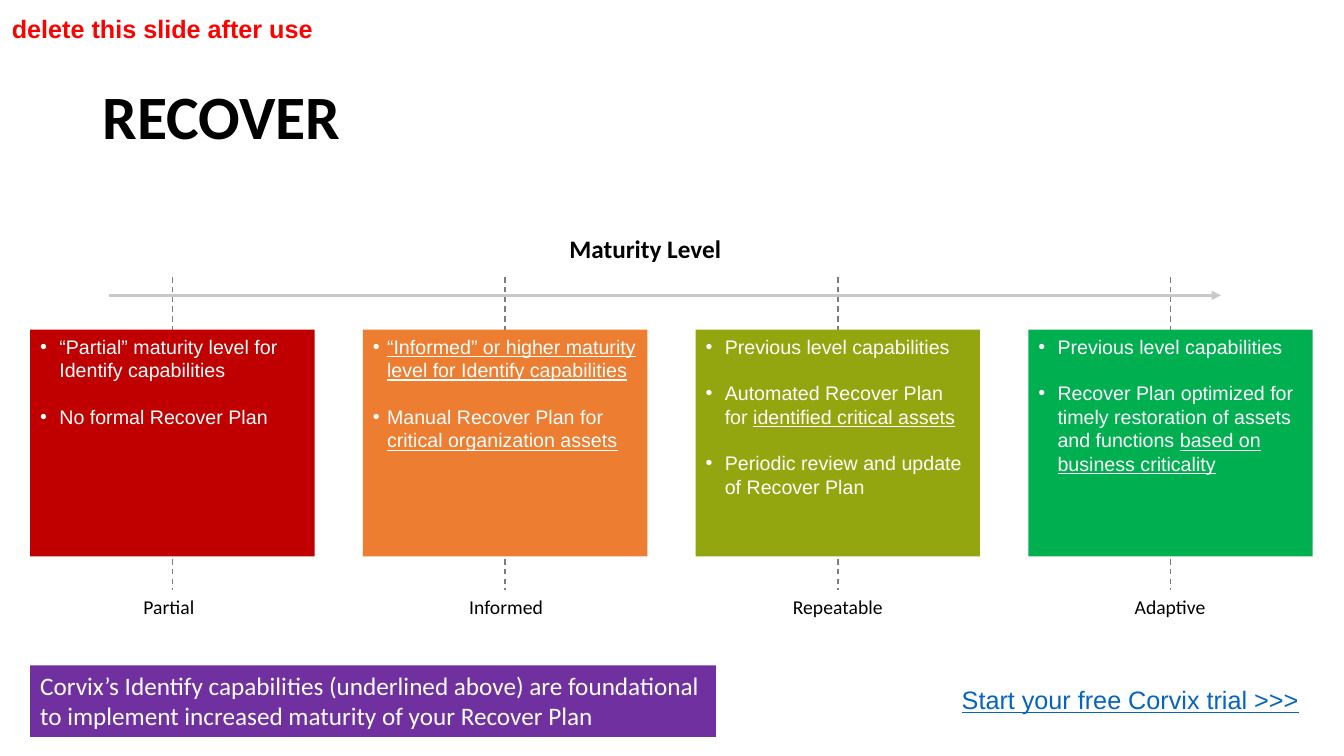
from lxml import etree
from pptx import Presentation
from pptx.dml.color import RGBColor as RGB
from pptx.enum.dml import MSO_LINE
from pptx.enum.shapes import MSO_CONNECTOR as CONNECTOR, MSO_SHAPE as SHAPE
from pptx.enum.text import MSO_ANCHOR as ANCHOR, MSO_AUTO_SIZE as AUTO_SIZE, PP_ALIGN as ALIGN
from pptx.oxml.ns import qn
from pptx.util import Inches, Pt

COLORS = {
    "black": "000000",
    "white": "FFFFFF",
    "notice": "FF0000",
    "link": "0563C1",
    "axis": "C9C9C9",
    "guide": "7C7C7C",
    "partial": "C00000",
    "informed": "ED7D31",
    "repeatable": "93A60F",
    "adaptive": "00B050",
    "summary": "7030A0",
}

LEVELS = [
    ("Partial", 1.32, 0.71, 0.19, [
        [("“Partial” maturity level for Identify capabilities", False)],
        [("No formal Recover Plan", False)],
    ]),
    ("Informed", 4.55, 0.94, 0.14, [
        [("“Informed” or higher maturity level for Identify capabilities", True)],
        [("Manual Recover Plan for ", False), ("critical organization assets", True)],
    ]),
    ("Repeatable", 7.76, 1.1, 0.19, [
        [("Previous level capabilities", False)],
        [("Automated Recover Plan for ", False), ("identified critical assets", True)],
        [("Periodic review and update of Recover Plan", False)],
    ]),
    ("Adaptive", 11.15, 0.91, 0.19, [
        [("Previous level capabilities", False)],
        [("Recover Plan optimized for timely restoration of assets and functions ", False),
         ("based on business criticality", True)],
    ]),
]

CARD_LEFT, CARD_TOP, CARD_WIDTH, CARD_HEIGHT, CARD_PITCH = 0.3, 3.27, 2.82, 2.25, 3.3


class MaturitySlide:
    def __init__(self, deck):
        self.shapes = deck.slides.add_slide(deck.slide_layouts[6]).shapes

    def style(self, run, size, color, font, bold=False, underline=False):
        run.font.size = Pt(size)
        run.font.name = font
        run.font.bold = bold
        run.font.underline = underline
        run.font.color.rgb = RGB.from_string(COLORS[color])

    def text(self, words, box, size, color="black", font="Calibri", align=ALIGN.LEFT,
             anchor=ANCHOR.TOP, wrap=False, **emphasis):
        frame = self.shapes.add_textbox(*map(Inches, box)).text_frame
        frame.text = words
        frame.word_wrap = wrap
        frame.vertical_anchor = anchor
        paragraph = frame.paragraphs[0]
        paragraph.alignment = align
        self.style(paragraph.runs[0], size, color, font, **emphasis)

    def line(self, start, end, color, width):
        line = self.shapes.add_connector(CONNECTOR.STRAIGHT, *map(Inches, start + end))
        line.line.color.rgb = RGB.from_string(COLORS[color])
        line.line.width = Pt(width)
        etree.SubElement(line._element.spPr, qn("a:effectLst"))
        return line.line

    def arrow(self, start, end, color, width):
        stroke = self.line(start, end, color, width)
        etree.SubElement(stroke._get_or_add_ln(), qn("a:tailEnd"), type="triangle")

    def dashed(self, start, end, color, width):
        self.line(start, end, color, width).dash_style = MSO_LINE.DASH

    def panel(self, box, color):
        panel = self.shapes.add_shape(SHAPE.RECTANGLE, *map(Inches, box))
        panel.shadow.inherit = False
        panel.fill.solid()
        panel.fill.fore_color.rgb = RGB.from_string(COLORS[color])
        panel.line.fill.background()
        frame = panel.text_frame
        frame.word_wrap = True
        frame.vertical_anchor = ANCHOR.TOP
        return frame

    def card(self, box, color, indent, points):
        frame = self.panel(box, color)
        for index, point in enumerate(points):
            paragraph = frame.add_paragraph() if index else frame.paragraphs[0]
            paragraph.alignment = ALIGN.LEFT
            paragraph.space_before = Pt(16.5 if index else 0)
            properties = paragraph._p.get_or_add_pPr()
            properties.set("marL", str(Inches(indent)))
            properties.set("indent", str(-Inches(indent)))
            etree.SubElement(properties, qn("a:buFont"), typeface="Arial")
            etree.SubElement(properties, qn("a:buChar"), char="•")
            for words, underline in point:
                run = paragraph.add_run()
                run.text = words
                self.style(run, 14, "white", "Arial", underline=underline)

    def banner(self, words, box, color):
        frame = self.panel(box, color)
        frame.text = words
        frame.auto_size = AUTO_SIZE.SHAPE_TO_FIT_TEXT
        frame.paragraphs[0].alignment = ALIGN.LEFT
        self.style(frame.paragraphs[0].runs[0], 18, "white", "Calibri")


def main():
    deck = Presentation()
    deck.slide_width, deck.slide_height = Inches(13.33), Inches(7.5)
    slide = MaturitySlide(deck)

    slide.text("RECOVER", (0.92, 0.41, 11.5, 1.45), 44, anchor=ANCHOR.MIDDLE, wrap=True, bold=True)
    slide.text("delete this slide after use", (-0.56, 0.07, 4.34, 0.43), 18, "notice", "Arial",
               ALIGN.CENTER, ANCHOR.MIDDLE, bold=True)
    slide.text("Start your free Corvix trial >>>", (9.44, 6.74, 3.55, 0.4), 18, "link", "Arial",
               underline=True)
    slide.text("Maturity Level", (3.41, 2.27, 5.98, 0.4), 18, align=ALIGN.CENTER, wrap=True, bold=True)
    slide.arrow((1.08, 2.93), (12.11, 2.93), "axis", 2.25)

    for index, (level, label_left, label_width, indent, points) in enumerate(LEVELS):
        left = CARD_LEFT + index * CARD_PITCH
        middle = left + CARD_WIDTH / 2
        slide.text(level, (label_left, 5.85, label_width, 0.34), 14, align=ALIGN.CENTER)
        slide.dashed((middle, 2.75), (middle, 5.85), "guide", 1)
        slide.card((left, CARD_TOP, CARD_WIDTH, CARD_HEIGHT), level.lower(), indent, points)

    slide.banner("Corvix’s Identify capabilities (underlined above) are foundational "
                 "to implement increased maturity of your Recover Plan",
                 (0.3, 6.6, 6.8, 0.71), "summary")
    deck.save("out.pptx")


if __name__ == "__main__":
    main()
